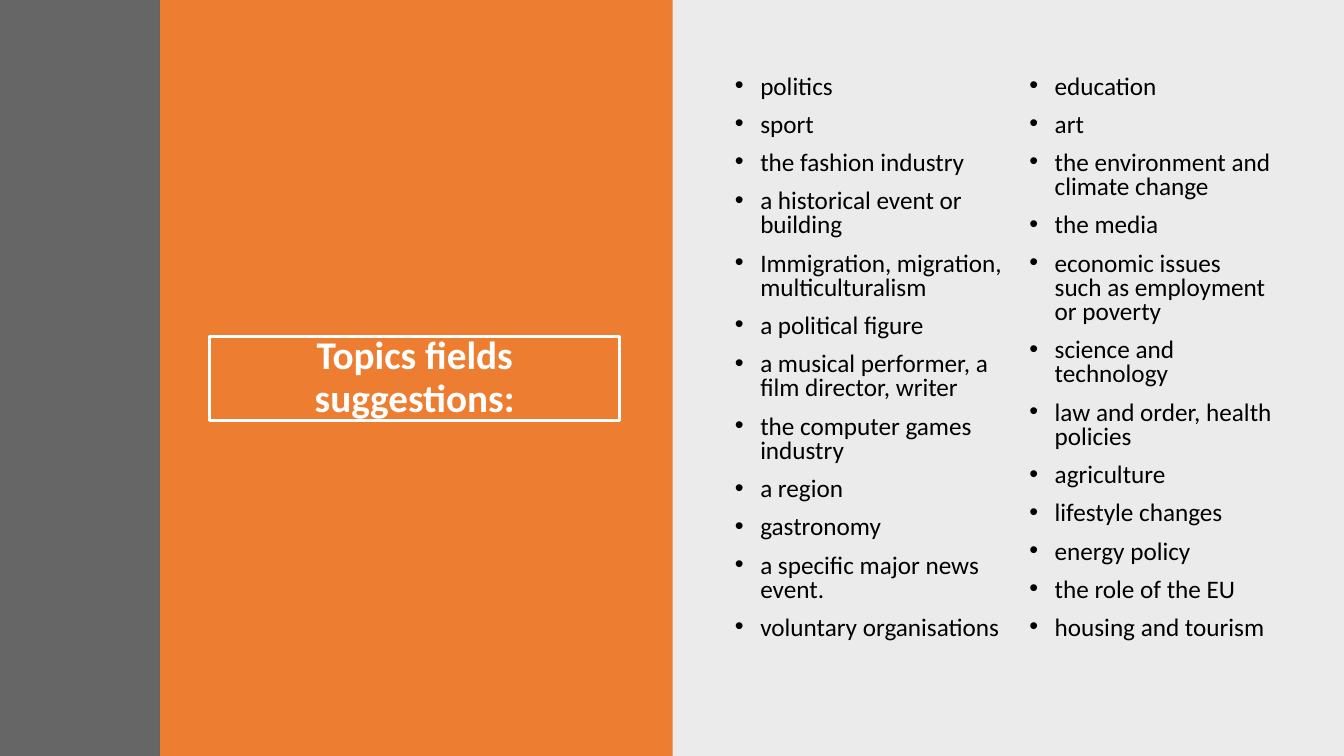
from lxml.etree import SubElement
from pptx import Presentation
from pptx.dml.color import RGBColor
from pptx.enum.shapes import MSO_SHAPE
from pptx.enum.text import MSO_ANCHOR, MSO_AUTO_SIZE, PP_ALIGN
from pptx.oxml.ns import qn
from pptx.util import Cm, Pt

BLACK = RGBColor(0x00, 0x00, 0x00)
WHITE = RGBColor(0xFF, 0xFF, 0xFF)
ORANGE = RGBColor(0xED, 0x7D, 0x31)
CHARCOAL = RGBColor(0x40, 0x40, 0x40)

SLIDE_WIDTH, SLIDE_HEIGHT = 33.87, 19.05
MIDDLE = SLIDE_WIDTH / 2
BAND_WIDTH = 4.03
HEADING = "Topics fields suggestions:"
HEADING_FONT = {"name": "Calibri", "size": Pt(28), "bold": True}
TOPIC_FONT = {"name": "Calibri", "size": Pt(18)}
TOPIC_INDENT = Cm(0.64)

LEFT_TOPICS = [
    "politics",
    "sport",
    "the fashion industry",
    "a historical event or building",
    "Immigration, migration, multiculturalism",
    "a political figure",
    "a musical performer, a film director, writer",
    "the computer games industry",
    "a region",
    "gastronomy",
    "a specific major news event.",
    "voluntary organisations",
]
RIGHT_TOPICS = [
    "education",
    "art",
    "the environment and climate change",
    "the media",
    "economic issues such as employment or poverty",
    "science and technology",
    "law and order, health policies",
    "agriculture",
    "lifestyle changes",
    "energy policy",
    "the role of the EU",
    "housing and tourism",
]


def set_format(target, values, color=None):
    """Apply format values, and a colour if given, to a font or paragraph."""
    for attribute, value in values.items():
        setattr(target, attribute, value)
    if color is not None:
        target.color.rgb = color


def place(shape, left, top, width, height):
    """Move and size a shape in centimetres."""
    set_format(shape, {"left": Cm(left), "top": Cm(top),
                       "width": Cm(width), "height": Cm(height)})


def add_panel(slide, box, color, opacity=100):
    """Fill a box with colour behind the placeholders."""
    panel = slide.shapes.add_shape(MSO_SHAPE.RECTANGLE, *map(Cm, box))
    panel.shadow.inherit = False
    panel.line.fill.background()
    panel.fill.solid()
    panel.fill.fore_color.rgb = color
    if opacity < 100:
        tint = panel.element.spPr.find(qn("a:solidFill"))[0]
        SubElement(tint, qn("a:alpha"), val=str(opacity * 1000))
    slide.shapes.title.element.addprevious(panel.element)


def add_heading(slide, box):
    """Build the orange panel with its outlined heading."""
    left, top, width, height = box
    add_panel(slide, box, ORANGE)
    heading = slide.shapes.title
    place(heading, left + 1.25, top + 8.48, width - 2.58, 2.11)
    heading.line.color.rgb = WHITE
    heading.line.width = Pt(2)
    frame = heading.text_frame
    frame.text = HEADING
    set_format(frame, {"word_wrap": True, "auto_size": MSO_AUTO_SIZE.NONE,
                       "vertical_anchor": MSO_ANCHOR.MIDDLE})
    paragraph = frame.paragraphs[0]
    set_format(paragraph, {"alignment": PP_ALIGN.CENTER, "line_spacing": 0.9,
                           "space_before": Pt(0)})
    set_format(paragraph.runs[0].font, HEADING_FONT, WHITE)


def fill_topics(column, topics):
    """Write one column of bulleted topics."""
    frame = column.text_frame
    frame.text = "\n".join(topics)
    set_format(frame, {"word_wrap": True, "auto_size": MSO_AUTO_SIZE.NONE,
                       "vertical_anchor": MSO_ANCHOR.TOP})
    for number, paragraph in enumerate(frame.paragraphs):
        properties = paragraph._p.get_or_add_pPr()
        properties.set("marL", str(TOPIC_INDENT))
        properties.set("indent", str(-TOPIC_INDENT))
        SubElement(properties, qn("a:buFont"), typeface="Arial")
        SubElement(properties, qn("a:buChar"), char="•")
        set_format(paragraph, {"line_spacing": 0.8,
                               "space_before": Pt(10 if number else 0)})
        set_format(paragraph.runs[0].font, TOPIC_FONT, BLACK)


def add_topics(slide, box):
    """Build the pale panel with two columns of topics."""
    left, top, width, height = box
    add_panel(slide, box, BLACK, opacity=8)
    left_column, right_column = slide.placeholders[1], slide.placeholders[2]
    place(left_column, left + 1.33, top + 1.78, 7.65, 15.82)
    place(right_column, left + 8.75, top + 1.78, 6.63, 15.49)
    fill_topics(left_column, LEFT_TOPICS)
    fill_topics(right_column, RIGHT_TOPICS)


def main():
    """Build and save the slide."""
    presentation = Presentation()
    presentation.slide_width = Cm(SLIDE_WIDTH)
    presentation.slide_height = Cm(SLIDE_HEIGHT)
    slide = presentation.slides.add_slide(presentation.slide_layouts[3])
    add_topics(slide, (MIDDLE, 0, MIDDLE, SLIDE_HEIGHT))
    add_heading(slide, (BAND_WIDTH, 0, 12.92, SLIDE_HEIGHT))
    add_panel(slide, (0, 0, BAND_WIDTH, SLIDE_HEIGHT), CHARCOAL, opacity=80)
    presentation.save("out.pptx")


if __name__ == "__main__":
    main()
